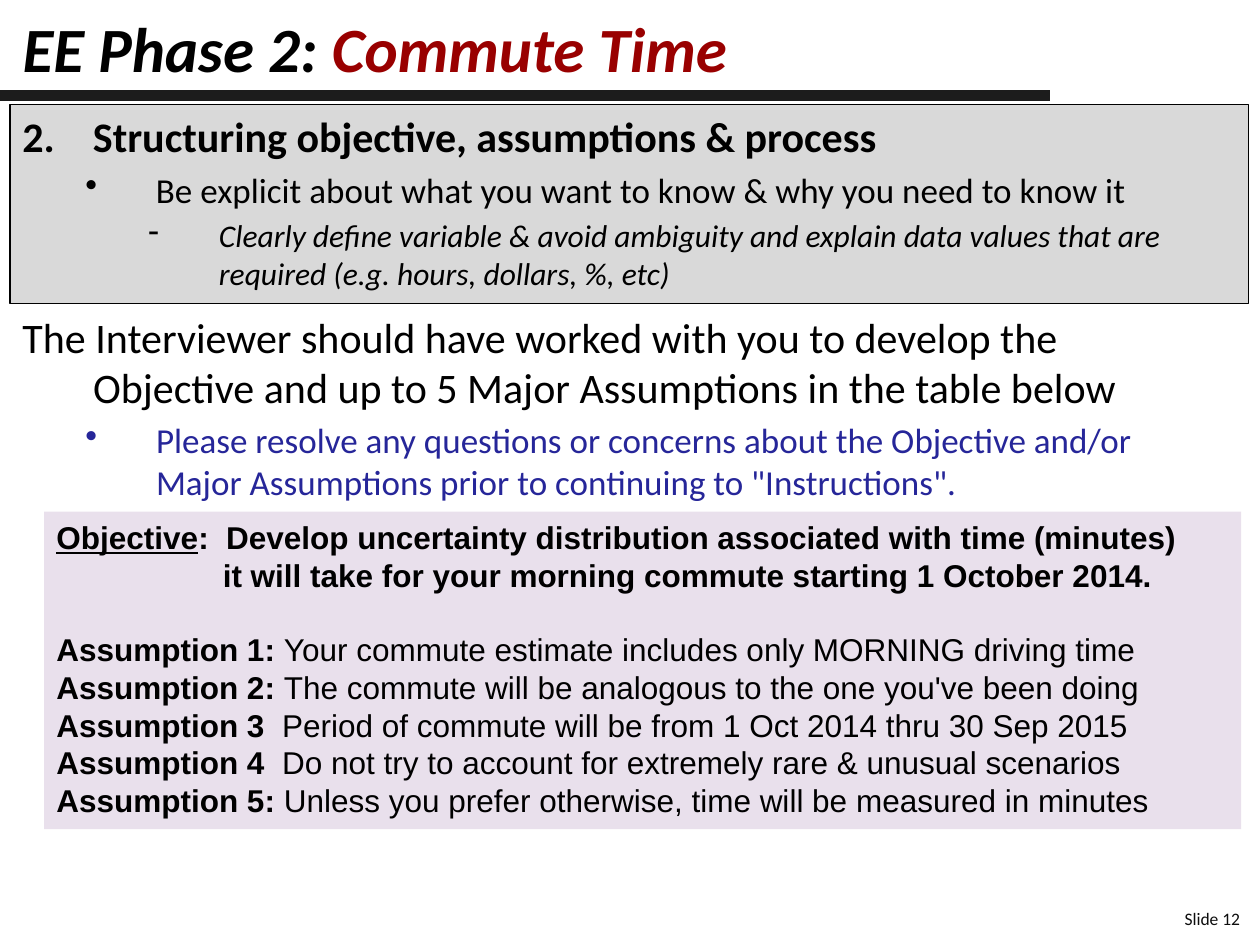
from lxml import etree
from pptx import Presentation
from pptx.dml.color import RGBColor
from pptx.enum.shapes import MSO_CONNECTOR, MSO_SHAPE
from pptx.enum.text import MSO_ANCHOR, MSO_AUTO_SIZE, PP_ALIGN
from pptx.oxml.ns import qn
from pptx.util import Inches, Pt

RECT, STRAIGHT = MSO_SHAPE.RECTANGLE, MSO_CONNECTOR.STRAIGHT
TOP, MIDDLE = MSO_ANCHOR.TOP, MSO_ANCHOR.MIDDLE
LEFT, RIGHT = PP_ALIGN.LEFT, PP_ALIGN.RIGHT
BLACK, RED, BLUE = "000000", "990000", "262699"

# Content
TITLE = [("EE Phase 2: ", BLACK), ("Commute Time", RED)]
FOOTER = "Slide 12"
# Outline rows: level, bullet, text, font options
STEP = [
    (0, "2.", "Structuring objective, assumptions & process", {"bold": True}),
    (1, "•", "Be explicit about what you want to know & why you need to know it", {}),
    (2, "-", "Clearly define variable & avoid ambiguity and explain data values "
             "that are required (e.g. hours, dollars, %, etc)", {"italic": True}),
]
REVIEW = [
    (0, None, "The Interviewer should have worked with you to develop the "
              "Objective and up to 5 Major Assumptions in the table below", {}),
    (1, "•", "Please resolve any questions or concerns about the Objective and/or "
             "Major Assumptions prior to continuing to \"Instructions\".", {"color": BLUE}),
]
OBJECTIVE = ("Objective", ":  Develop uncertainty distribution associated with time (minutes)")
OBJECTIVE_END = "it will take for your morning commute starting 1 October 2014."
ASSUMPTIONS = [
    ("Assumption 1: ", "Your commute estimate includes only MORNING driving time"),
    ("Assumption 2: ", "The commute will be analogous to the one you've been doing"),
    ("Assumption 3  ", "Period of commute will be from 1 Oct 2014 thru 30 Sep 2015"),
    ("Assumption 4  ", "Do not try to account for extremely rare & unusual scenarios"),
    ("Assumption 5: ", "Unless you prefer otherwise, time will be measured in minutes"),
]
LEVEL_SIZES = (24, 20, 18)


def rgb(value):
    return RGBColor.from_string(value)


def box_at(*lengths):
    return [Inches(n) for n in lengths]


def add_run(p, text, size, font="Calibri", color=BLACK, bold=False, italic=False, underline=False):
    r = p.add_run()
    r.text = text
    r.font.name, r.font.size = font, Pt(size)
    r.font.bold, r.font.italic, r.font.underline = bold, italic, underline
    r.font.color.rgb = rgb(color)


def next_paragraph(tf, first):
    p = tf.paragraphs[0] if first else tf.add_paragraph()
    p.alignment = LEFT
    return p


def add_panel(slide, at, fill):
    sp = slide.shapes.add_shape(RECT, *box_at(*at))
    sp.shadow.inherit = False
    sp.fill.solid()
    sp.fill.fore_color.rgb = rgb(fill)
    sp.text_frame.word_wrap = True
    sp.text_frame.vertical_anchor = TOP
    return sp


def add_textbox(slide, at):
    tf = slide.shapes.add_textbox(*box_at(*at)).text_frame
    tf.word_wrap = True
    return tf


def write_outline(tf, rows):
    for i, (level, bullet, text, options) in enumerate(rows):
        p = next_paragraph(tf, i == 0)
        p.level = level
        pPr = p._p.get_or_add_pPr()
        pPr.set("marL", str(Inches(0.56 + 0.5 * level)))
        pPr.set("indent", str(Inches(-0.56)))
        if bullet is None:
            etree.SubElement(pPr, qn("a:buNone"))
        elif bullet[0].isdigit():
            etree.SubElement(pPr, qn("a:buAutoNum"), type="arabicPeriod", startAt=bullet[:-1])
        else:
            etree.SubElement(pPr, qn("a:buChar"), char=bullet)
        size = LEVEL_SIZES[level]
        if i:
            p.space_before = Pt(size * 0.2)
        add_run(p, text, size, **options)


prs = Presentation()
prs.slide_width, prs.slide_height = box_at(10, 7.5)
s = prs.slides.add_slide(prs.slide_layouts[5])

# Title and rule below it
title = s.shapes.title
title.left, title.top, title.width, title.height = box_at(0.08, 0.04, 7, 0.67)
tf = title.text_frame
tf.auto_size = MSO_AUTO_SIZE.NONE
tf.vertical_anchor = MIDDLE
p = next_paragraph(tf, True)
for text, color in TITLE:
    add_run(p, text, 36, color=color, bold=True, italic=True)

rule = s.shapes.add_connector(STRAIGHT, *box_at(0, 0.76, 8.33, 0.76))
rule.line.color.rgb = rgb("1C1C1C")
rule.line.width = Pt(6.5)
etree.SubElement(rule._element.spPr, qn("a:effectLst"))

# Step panel and review text
step = add_panel(s, (0.08, 0.83, 9.83, 1.58), "D9D9D9")
step.line.color.rgb = rgb(BLACK)
step.line.width = Pt(0.75)
write_outline(step.text_frame, STEP)
write_outline(add_textbox(s, (0.08, 2.42, 9.58, 1.75)), REVIEW)

# Objective and assumptions panel, half transparent
panel = add_panel(s, (0.35, 4.06, 9.5, 2.52), "D5C3DB")
panel.line.fill.background()
color_el = panel._element.spPr.find(qn("a:solidFill"))[0]
etree.SubElement(color_el, qn("a:alpha"), val="50000")
tf = panel.text_frame
p = next_paragraph(tf, True)
for text, underline in zip(OBJECTIVE, (True, False)):
    add_run(p, text, 18, "Arial", bold=True, underline=underline)
p = next_paragraph(tf, False)
p._p.get_or_add_pPr().set("marL", str(Inches(1.32)))
p.space_after = Pt(21)
add_run(p, OBJECTIVE_END, 18, "Arial", bold=True)
for label, text in ASSUMPTIONS:
    p = next_paragraph(tf, False)
    add_run(p, label, 18, "Arial", bold=True)
    add_run(p, text, 18, "Arial")

# Slide number
p = add_textbox(s, (8.94, 7.16, 1, 0.43 - 0.1)).paragraphs[0]
p.alignment = RIGHT
add_run(p, FOOTER, 10, color="0D0D0D")

prs.save("out.pptx")
